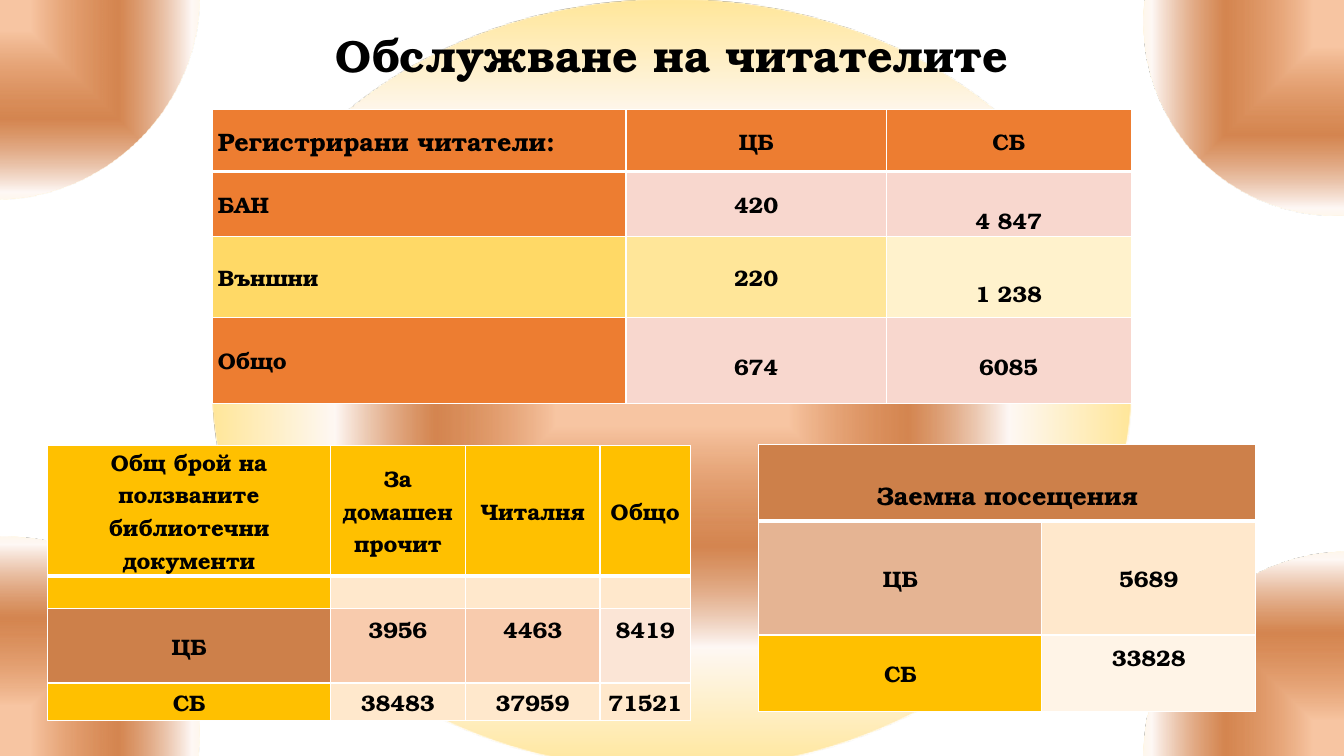
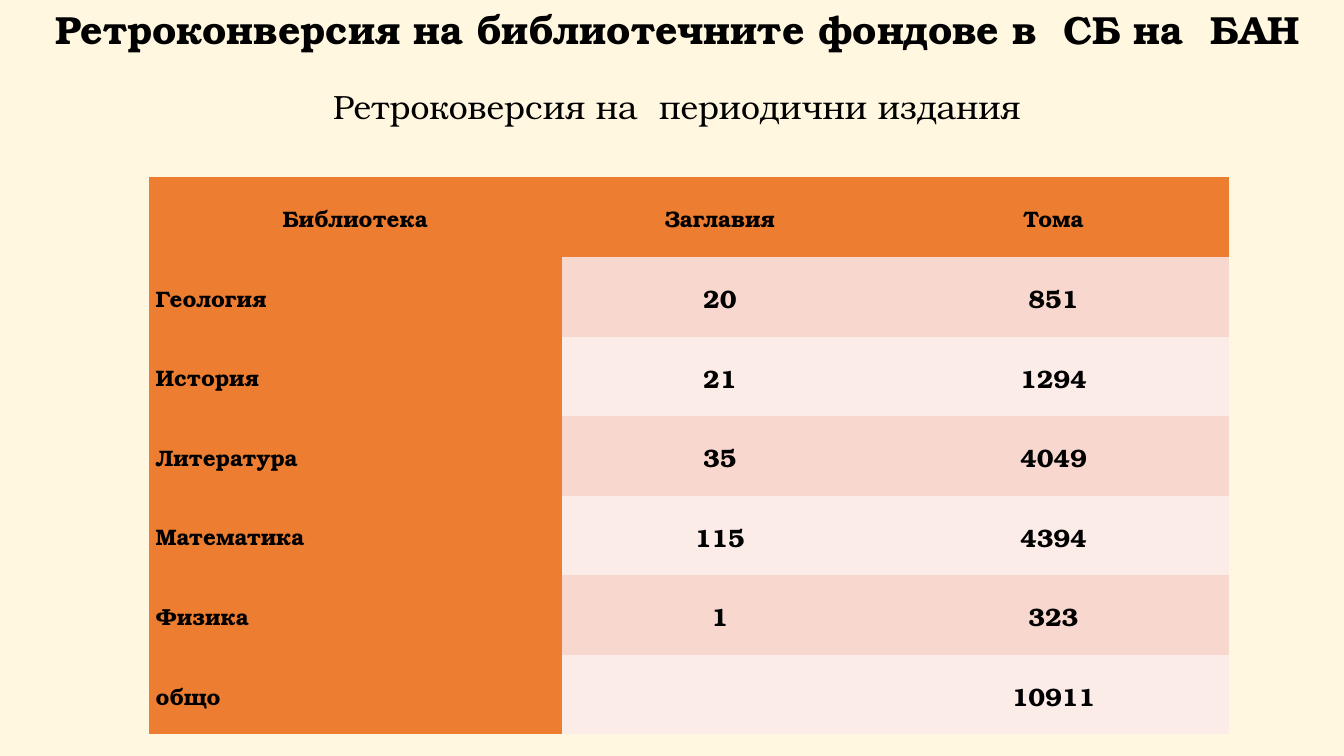
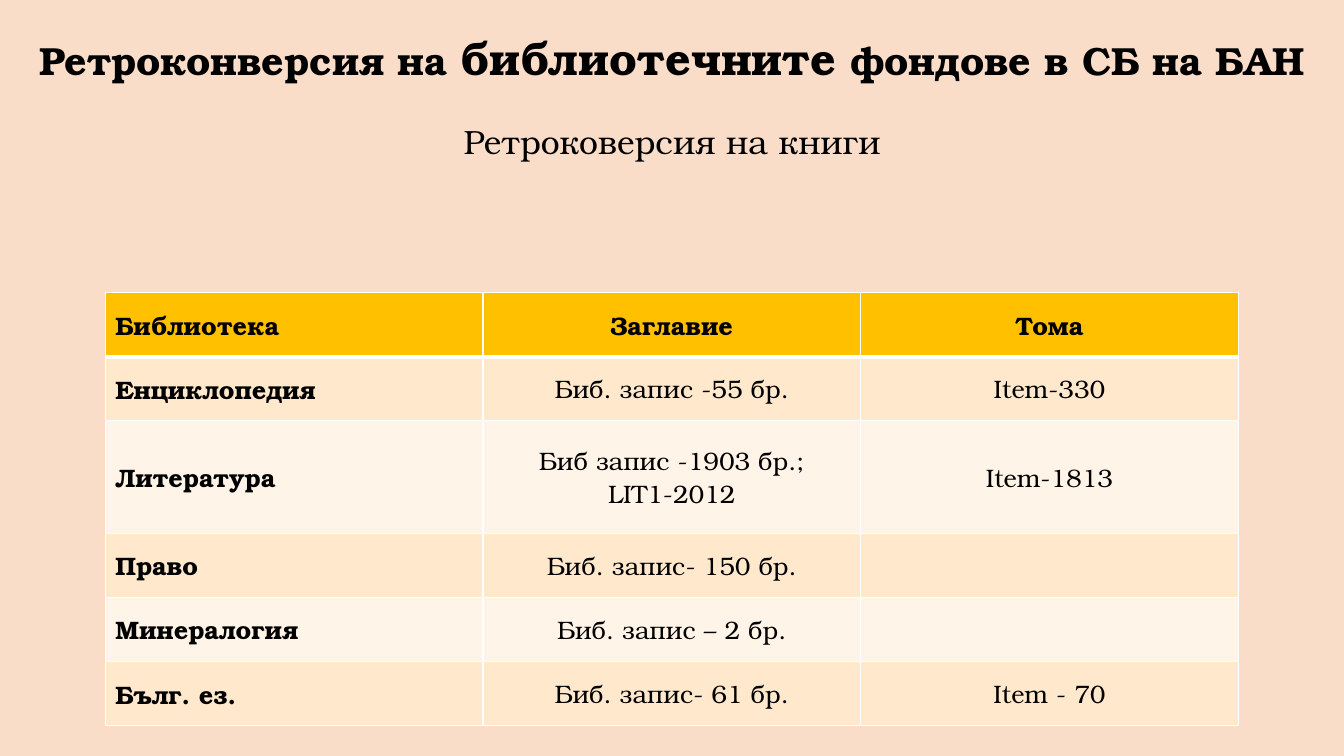
from itertools import product

from pptx import Presentation
from pptx import util as u
from pptx.dml import color
from pptx.enum import shapes, text
from pptx.oxml import ns, parse_xml

FONT = "TeX Gyre Bonum"
BLACK, WHITE = "000000", "FFFFFF"
ORANGE, GOLD, COPPER = "ED7D31", "FFC000", "CD804A"
ROSE, PALE_ROSE = "F8D7CE", "FCECE8"
CREAM, PALE_CREAM = "FFE8CC", "FFF4E7"
PEACH, SAND = "F8CBAD", "FFF2CC"
GLOW = [(11, "F7C5A2", 100), (42, "C55A11", 73), (68, "FEF8F5", 100), (100, "FFE699", 100)]
NO_GRID = "{2D5ABB26-0587-4C30-8999-92F81FD0307C}"
WIDTH, HEIGHT = 960, 540
LINE = 23
LEFT, CENTER = text.PP_ALIGN.LEFT, text.PP_ALIGN.CENTER


def rgb(value):
    """Turn a hex string into a colour."""
    return color.RGBColor.from_string(value)


class Deck:
    """Hold the shared style and the current slide."""

    def __init__(self):
        """Start a wide presentation."""
        self.presentation = Presentation()
        self.presentation.slide_width = u.Pt(WIDTH)
        self.presentation.slide_height = u.Pt(HEIGHT)
        self.slide = None

    def add_slide(self):
        """Start a slide that has a title only."""
        self.slide = self.presentation.slides.add_slide(self.presentation.slide_layouts[5])

    def style(self, paragraph, size, bold=True, align=CENTER):
        """Format a paragraph and its runs."""
        paragraph.alignment = align
        for run in paragraph.runs:
            run.font.name = FONT
            run.font.size = u.Pt(size)
            run.font.bold = bold
            run.font.color.rgb = rgb(BLACK)

    def title(self, left, top, *parts):
        """Place the title above the backdrop, from text and size pairs."""
        shape = self.slide.shapes.title
        self.slide.shapes._spTree.append(shape._element)
        shape.left, shape.top = u.Pt(left), u.Pt(top)
        shape.width, shape.height = u.Pt(WIDTH - left), u.Pt(46)
        frame = shape.text_frame
        frame.auto_size = text.MSO_AUTO_SIZE.NONE
        frame.vertical_anchor = text.MSO_ANCHOR.TOP
        paragraph = frame.paragraphs[0]
        for words, _ in parts:
            paragraph.add_run().text = words
        self.style(paragraph, parts[0][1])
        for run, (_, size) in zip(paragraph.runs, parts):
            run.font.size = u.Pt(size)

    def subtitle(self, left, top, width, words):
        """Add a centred line below the title."""
        box = self.slide.shapes.add_textbox(u.Pt(left), u.Pt(top), u.Pt(width), u.Pt(36))
        box.text_frame.word_wrap = True
        box.text_frame.text = words
        self.style(box.text_frame.paragraphs[0], 24, bold=False)

    def shape(self, kind, left, top, width, height):
        """Add a plain shape without line or shadow."""
        shape = self.slide.shapes.add_shape(kind, u.Pt(left), u.Pt(top), u.Pt(width), u.Pt(height))
        shape.shadow.inherit = False
        shape.line.fill.background()
        return shape

    def wash(self, fill, opacity):
        """Cover the slide with a translucent colour."""
        shape = self.shape(shapes.MSO_SHAPE.RECTANGLE, 0, 0, WIDTH, HEIGHT)
        shape.fill.solid()
        shape.fill.fore_color.rgb = rgb(fill)
        tint = shape._element.spPr.find(f"{ns.qn('a:solidFill')}/{ns.qn('a:srgbClr')}")
        tint.append(parse_xml(f'<a:alpha {ns.nsdecls("a")} val="{opacity * 1000}"/>'))

    def glow(self, left, top, width, height, rotation=0):
        """Add an ellipse with the warm gradient."""
        shape = self.shape(shapes.MSO_SHAPE.OVAL, left, top, width, height)
        shape.rotation = rotation
        shape.fill.background()
        stops = "".join(
            f'<a:gs pos="{place * 1000}"><a:srgbClr val="{tone}">'
            f'<a:alpha val="{opacity * 1000}"/></a:srgbClr></a:gs>'
            for place, tone, opacity in GLOW)
        gradient = parse_xml(
            f'<a:gradFill {ns.nsdecls("a")} rotWithShape="1"><a:gsLst>{stops}</a:gsLst>'
            '<a:path path="shape"><a:fillToRect l="50000" t="50000" r="50000" b="50000"/>'
            '</a:path></a:gradFill>')
        properties = shape._element.spPr
        properties.replace(properties.find(ns.qn("a:noFill")), gradient)

    def border(self, cell, row):
        """Draw white cell borders, thick below the header."""
        thick = {(0, "B"), (1, "T")}
        for side in "LRTB":
            weight = u.Pt(3 if (row, side) in thick else 1)
            cell._tc.get_or_add_tcPr().append(parse_xml(
                f'<a:ln{side} {ns.nsdecls("a")} w="{weight}"><a:solidFill>'
                f'<a:srgbClr val="{WHITE}"/></a:solidFill></a:ln{side}>'))

    def table(self, left, top, widths, heights, rows, fills, size=16, body_size=None,
              body_bold=True, insets=(3.6, 0), header_align=CENTER, label_align=CENTER,
              bordered=True, spacing=None):
        """Add a table with a header row and a label column."""
        frame = self.slide.shapes.add_table(
            len(rows), len(widths), u.Pt(left), u.Pt(top), u.Pt(sum(widths)), u.Pt(sum(heights)))
        table = frame.table
        table.horz_banding = False
        table._tbl.tblPr.find(ns.qn("a:tableStyleId")).text = NO_GRID
        for column, width in zip(table.columns, widths):
            column.width = u.Pt(width)
        for line, height in zip(table.rows, heights):
            line.height = u.Pt(height)
        for row, column in product(range(len(rows)), range(len(widths))):
            cell = table.cell(row, column)
            if bordered:
                self.border(cell, row)
            cell.fill.solid()
            cell.fill.fore_color.rgb = rgb(fills[row][column])
            cell.vertical_anchor = text.MSO_ANCHOR.MIDDLE
            cell.margin_left = cell.margin_right = u.Pt(insets[0])
            cell.margin_top = cell.margin_bottom = u.Pt(insets[1])
            paragraph = cell.text_frame.paragraphs[0]
            paragraph.text = rows[row][column]
            paragraph.line_spacing = spacing
            body = row > 0 and column > 0
            align = CENTER if column else label_align if row else header_align
            self.style(paragraph, body_size if body and body_size else size,
                       body_bold or not body, align)
        return table


def readers_slide(deck):
    """Build the slide on reader services."""
    deck.add_slide()
    for left, top in [(-145.4, -141), (-145.4, 385.2), (815, 396), (815, -129.6)]:
        deck.glow(left, top, 289.4, 281.5, 319.4)
    deck.glow(152, 0, 656, 549.4)

    readers = deck.table(
        152, 78.5, [295.2, 185.8, 175], [44, 46.5, 57.6, 61.9],
        [["Регистрирани читатели:", "ЦБ", "СБ"],
         ["БАН", "420", "4 847"],
         ["Външни", "220", "1 238"],
         ["Общо", "674", "6085"]],
        [[ORANGE] * 3, [ORANGE, ROSE, ROSE], ["FFD966", "FFE699", SAND], [ORANGE, ROSE, ROSE]],
        header_align=LEFT, label_align=LEFT)
    visits = deck.table(
        542, 317.5, [202, 153], [54.7, 81.4, 54.7],
        [["Заемна посещения", ""], ["ЦБ", "5689"], ["СБ", "33828"]],
        [[COPPER] * 2, ["E5B493", CREAM], [GOLD, PALE_CREAM]])
    loans = deck.table(
        34, 318.2, [202, 96.3, 96.3, 64.6], [93, 23, 53.5, 26.6],
        [["Общ брой на ползваните библиотечни документи", "За домашен прочит", "Читалня", "Общо"],
         [""] * 4,
         ["ЦБ", "3956", "4463", "8419"],
         ["СБ", "38483", "37959", "71521"]],
        [[GOLD] * 4, [GOLD] + [CREAM] * 3, [COPPER, PEACH, PEACH, "FBE5D6"], [GOLD] + [CREAM] * 3])

    visits.cell(0, 0).merge(visits.cell(0, 1))
    for table, align in [(readers, LEFT), (visits, CENTER)]:
        deck.style(table.cell(0, 0).text_frame.paragraphs[0], 18, align=align)
    for cell in [readers.cell(1, 2), readers.cell(3, 1), readers.cell(3, 2), visits.cell(0, 0)]:
        cell.vertical_anchor = text.MSO_ANCHOR.TOP
        cell.margin_top = u.Pt(LINE)
    readers.cell(2, 2).margin_top = u.Pt(LINE)
    for cell in [visits.cell(2, 1)] + [loans.cell(2, column) for column in (1, 2, 3)]:
        cell.margin_bottom = u.Pt(LINE)
    deck.title(0, 16.5, ("Обслужване на читателите", 32))


def periodicals_slide(deck):
    """Build the slide on converted periodicals."""
    deck.add_slide()
    deck.wash(SAND, 60)
    rows = [["Библиотека", "Заглавия", "Тома"],
            ["Геология", "20", "851"],
            ["История", "21", "1294"],
            ["Литература", "35", "4049"],
            ["Математика", "115", "4394"],
            ["Физика", "1", "323"],
            ["общо", "", "10911"]]
    bands = [[ORANGE] + [ROSE if row % 2 else PALE_ROSE] * 2 for row in range(1, len(rows))]
    deck.table(106.2, 126.7, [295.2, 225.4, 251.3], [56.85] * len(rows), rows,
               [[ORANGE] * 3] + bands, body_size=18, insets=(5, 0), label_align=LEFT,
               bordered=False, spacing=1.07)
    deck.title(8, 0, ("Ретроконверсия на библиотечните фондове в  СБ на  БАН", 28))
    deck.subtitle(167, 57.6, 633, "Ретроковерсия на  периодични издания")


def books_slide(deck):
    """Build the slide on converted books."""
    deck.add_slide()
    deck.wash(PEACH, 65)
    rows = [["Библиотека", "Заглавие", "Тома"],
            ["Енциклопедия", "Биб. запис -55 бр.", "Item-330"],
            ["Литература", "Биб запис -1903 бр.;\nLIT1-2012", "Item-1813"],
            ["Право", "Биб. запис- 150 бр.", ""],
            ["Минералогия", "Биб. запис – 2 бр.", ""],
            ["Бълг. ез.", "Биб. запис- 61 бр.", "Item - 70"]]
    bands = [[CREAM if row % 2 else PALE_CREAM] * 3 for row in range(1, len(rows))]
    deck.table(75.2, 209, [269.8] * 3, [45.8, 45.8, 80.3, 45.8, 45.8, 45.8], rows,
               [[GOLD] * 3] + bands, size=18, body_bold=False, insets=(7.2, 3.6),
               header_align=LEFT, label_align=LEFT)
    deck.title(0, 18, ("Ретроконверсия на ", 28), ("библиотечните", 32),
               (" фондове в СБ на БАН", 28))
    deck.subtitle(298, 82.8, 364, "Ретроковерсия на книги")


def main():
    """Build and save the presentation."""
    deck = Deck()
    readers_slide(deck)
    periodicals_slide(deck)
    books_slide(deck)
    deck.presentation.save("out.pptx")


if __name__ == "__main__":
    main()
